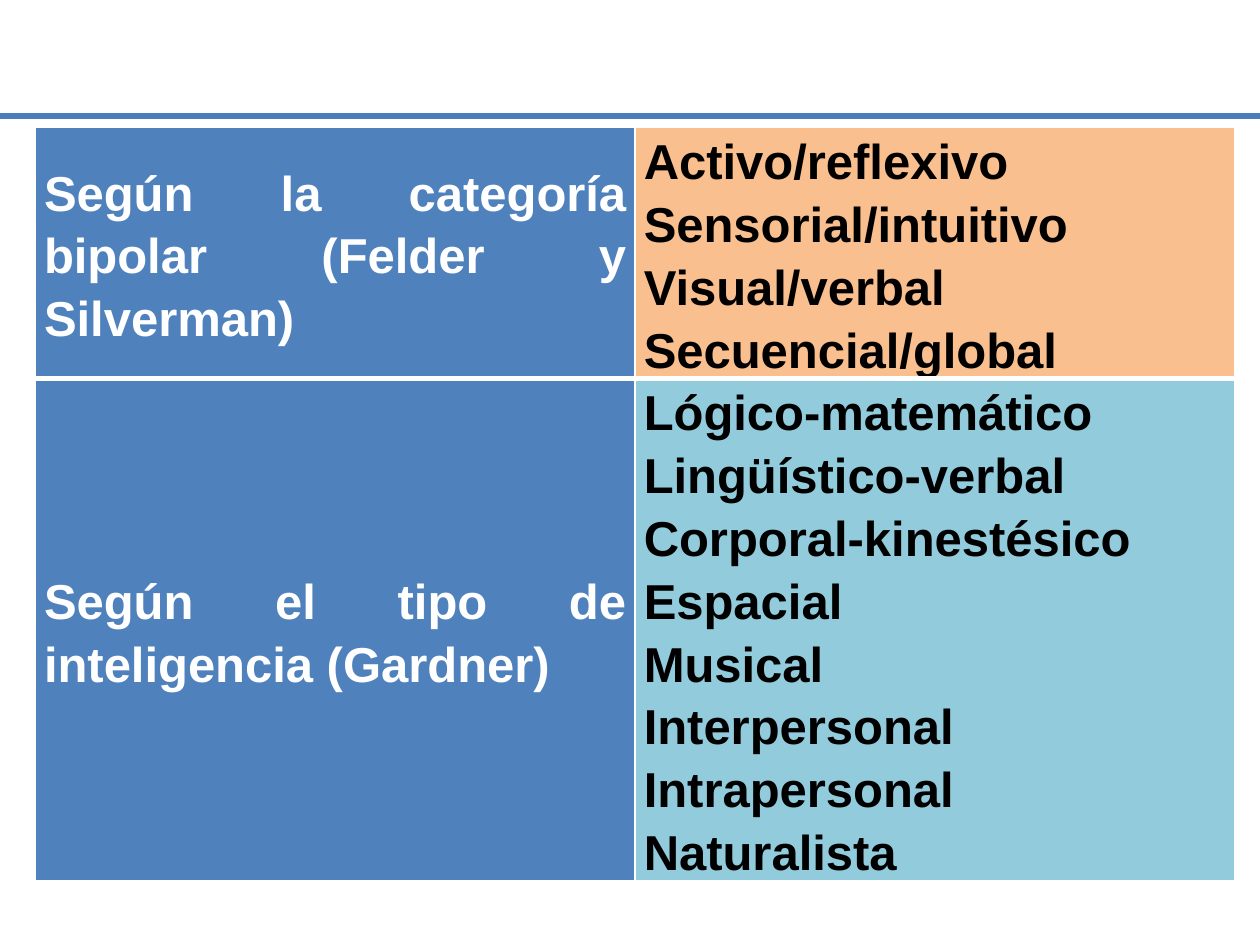
from lxml.etree import SubElement
from pptx import Presentation
from pptx.dml.color import RGBColor
from pptx.enum.shapes import MSO_CONNECTOR
from pptx.enum.text import MSO_ANCHOR, PP_ALIGN
from pptx.oxml.ns import qn
from pptx.util import Inches, Pt

LEFT, TOP = 0.28, 1.01
COLUMN_WIDTH = 4.76
LINE_HEIGHT = 0.4975
DIVIDER_Y = 0.92

CLASSIFICATIONS = [
    ("Según la categoría bipolar (Felder y Silverman)",
     ["Activo/reflexivo", "Sensorial/intuitivo", "Visual/verbal",
      "Secuencial/global"], "FABF8E"),
    ("Según el tipo de inteligencia (Gardner)",
     ["Lógico-matemático", "Lingüístico-verbal", "Corporal-kinestésico",
      "Espacial", "Musical", "Interpersonal", "Intrapersonal",
      "Naturalista"], "92CCDC"),
]


def rgb(value):
    return RGBColor.from_string(value)


def write(frame, lines, color, size=28, font="Arial", bold=True):
    for index, line in enumerate(lines):
        paragraph = frame.paragraphs[0] if index == 0 else frame.add_paragraph()
        paragraph.alignment = PP_ALIGN.JUSTIFY
        paragraph.line_spacing = 1.15
        run = paragraph.add_run()
        run.text = line
        run.font.name = font
        run.font.size = Pt(size)
        run.font.bold = bold
        run.font.color.rgb = rgb(color)


def add_borders(cell, widths, color="FFFFFF"):
    properties = cell._tc.get_or_add_tcPr()
    for side, width in zip("LRTB", widths):
        border = SubElement(properties, qn(f"a:ln{side}"), w=str(Pt(width)))
        fill = SubElement(border, qn("a:solidFill"))
        SubElement(fill, qn("a:srgbClr"), val=color)


def fill_cell(cell, lines, fill, color, anchor, borders):
    cell.margin_left = cell.margin_right = Inches(0.07)
    cell.margin_top = cell.margin_bottom = 0
    cell.vertical_anchor = anchor
    add_borders(cell, borders)
    cell.fill.solid()
    cell.fill.fore_color.rgb = rgb(fill)
    write(cell.text_frame, lines, color)


def main():
    deck = Presentation()
    deck.slide_width, deck.slide_height = Inches(10), Inches(7.5)
    slide = deck.slides.add_slide(deck.slide_layouts[6])

    divider = slide.shapes.add_connector(
        MSO_CONNECTOR.STRAIGHT, 0, Inches(DIVIDER_Y),
        deck.slide_width, Inches(DIVIDER_Y))
    divider.line.color.rgb = rgb("4A7DBA")
    divider.line.width = Pt(3)
    SubElement(divider._element.spPr, qn("a:effectLst"))

    heights = [LINE_HEIGHT * len(styles) for _, styles, _ in CLASSIFICATIONS]
    table = slide.shapes.add_table(
        len(CLASSIFICATIONS), 2, Inches(LEFT), Inches(TOP),
        Inches(2 * COLUMN_WIDTH), Inches(sum(heights))).table
    table.first_row = table.horz_banding = False
    for column in table.columns:
        column.width = Inches(COLUMN_WIDTH)

    row_borders = [(1, 1, 1, 3), (1, 1, 3, 1)]
    for index, (criterion, styles, fill) in enumerate(CLASSIFICATIONS):
        table.rows[index].height = Inches(heights[index])
        fill_cell(table.cell(index, 0), [criterion], "4F81BD", "FFFFFF",
                  MSO_ANCHOR.MIDDLE, row_borders[index])
        fill_cell(table.cell(index, 1), styles, fill, "000000",
                  MSO_ANCHOR.TOP, row_borders[index])

    deck.save("out.pptx")


if __name__ == "__main__":
    main()
